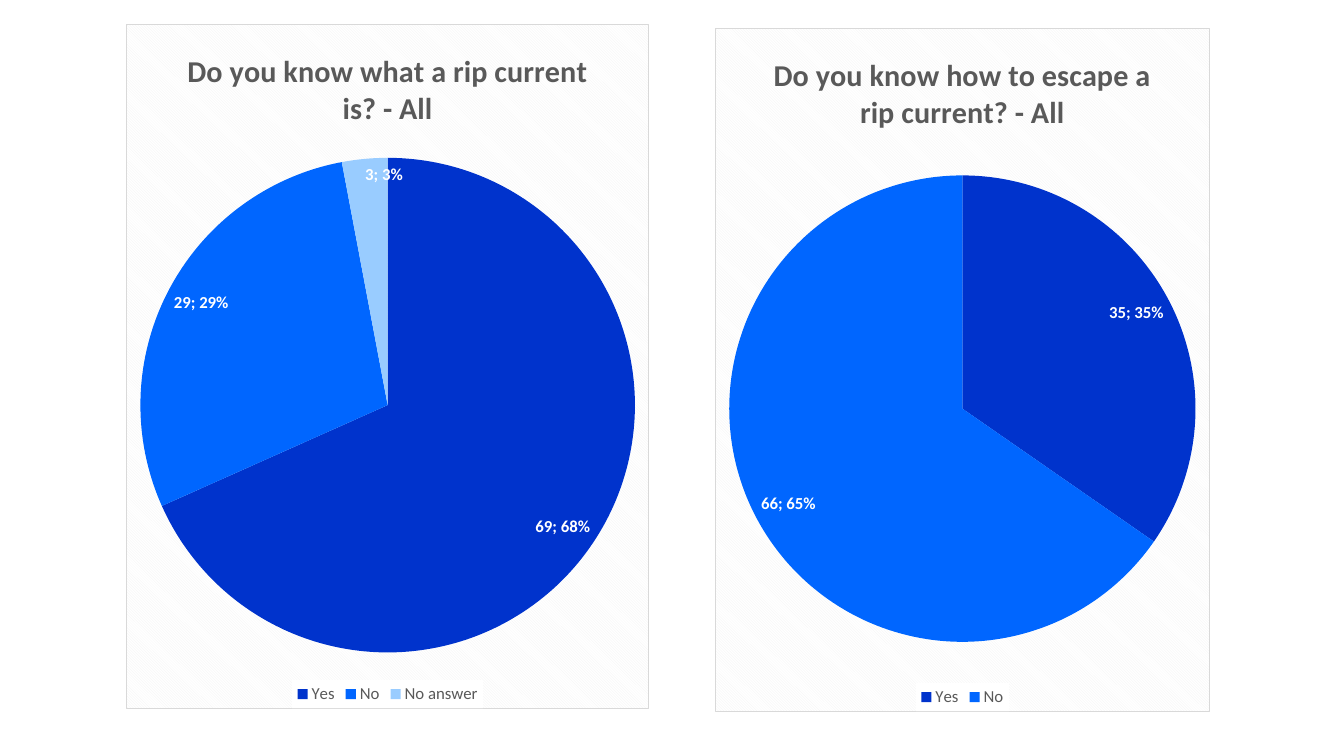
import pptx
import pptx.chart.data
import pptx.dml.color
import pptx.enum.chart
import pptx.oxml
import pptx.oxml.ns
import pptx.util
from pptx.util import Inches

SLICE_COLORS = ["0033CC", "0066FF", "99CCFF"]
PIES = [
    ("Do you know what a rip current is? - All",
     {"Yes": 69, "No": 29, "No answer": 3}, (1.25, 0.24, 5.19, 6.79)),
    ("Do you know how to escape a rip current? - All",
     {"Yes": 35, "No": 66}, (7.09, 0.28, 4.91, 6.78)),
]
NAMESPACES = pptx.oxml.ns.nsdecls("c", "a")
CHART_AREA = f"""<c:spPr {NAMESPACES}>
  <a:pattFill prst="dkDnDiag">
    <a:fgClr><a:srgbClr val="F2F2F2"/></a:fgClr>
    <a:bgClr><a:srgbClr val="FFFFFF"/></a:bgClr>
  </a:pattFill>
  <a:ln w="9525"><a:solidFill><a:srgbClr val="D9D9D9"/></a:solidFill></a:ln>
</c:spPr>"""
LEGEND_AREA = f"""<c:spPr {NAMESPACES}>
  <a:solidFill><a:srgbClr val="FFFFFF"/></a:solidFill><a:ln><a:noFill/></a:ln>
</c:spPr>"""
SEPARATOR = f"<c:separator {NAMESPACES}>; </c:separator>"


def style_font(font, size, color, bold=False):
    font.name = "Calibri"
    font.size = pptx.util.Pt(size)
    font.bold = bold
    font.color.rgb = pptx.dml.color.RGBColor.from_string(color)


def insert_after(chart, xpath, xml):
    chart.element.xpath(xpath)[0].addnext(pptx.oxml.parse_xml(xml))


presentation = pptx.Presentation()
presentation.slide_width = Inches(13.33)
presentation.slide_height = Inches(7.5)
slide = presentation.slides.add_slide(presentation.slide_layouts[6])

for title, answers, box in PIES:
    data = pptx.chart.data.CategoryChartData()
    data.categories = list(answers)
    data.add_series("Series 1", list(answers.values()))
    chart = slide.shapes.add_chart(
        pptx.enum.chart.XL_CHART_TYPE.PIE, *map(Inches, box), data).chart
    style_font(chart.font, 10, "000000")

    chart.has_title = True
    paragraph = chart.chart_title.text_frame.paragraphs[0]
    paragraph.text = title
    style_font(paragraph.runs[0].font, 21.6, "595959", bold=True)
    chart.chart_title.include_in_layout = False

    chart.has_legend = True
    chart.legend.position = pptx.enum.chart.XL_LEGEND_POSITION.BOTTOM
    chart.legend.include_in_layout = False
    style_font(chart.legend.font, 12, "595959")

    plot = chart.plots[0]
    plot.vary_by_categories = True
    series = plot.series[0]
    for index, color in enumerate(SLICE_COLORS[:len(answers)]):
        fill = series.points[index].format.fill
        fill.solid()
        fill.fore_color.rgb = pptx.dml.color.RGBColor.from_string(color)

    labels = series.data_labels
    labels.show_value = True
    labels.show_percentage = True
    labels.position = pptx.enum.chart.XL_LABEL_POSITION.INSIDE_END
    style_font(labels.font, 12, "FFFFFF", bold=True)

    insert_after(chart, "./c:chart", CHART_AREA)
    insert_after(chart, ".//c:legend/c:overlay", LEGEND_AREA)
    insert_after(chart, ".//c:ser/c:dLbls/c:showBubbleSize", SEPARATOR)

presentation.save("out.pptx")
